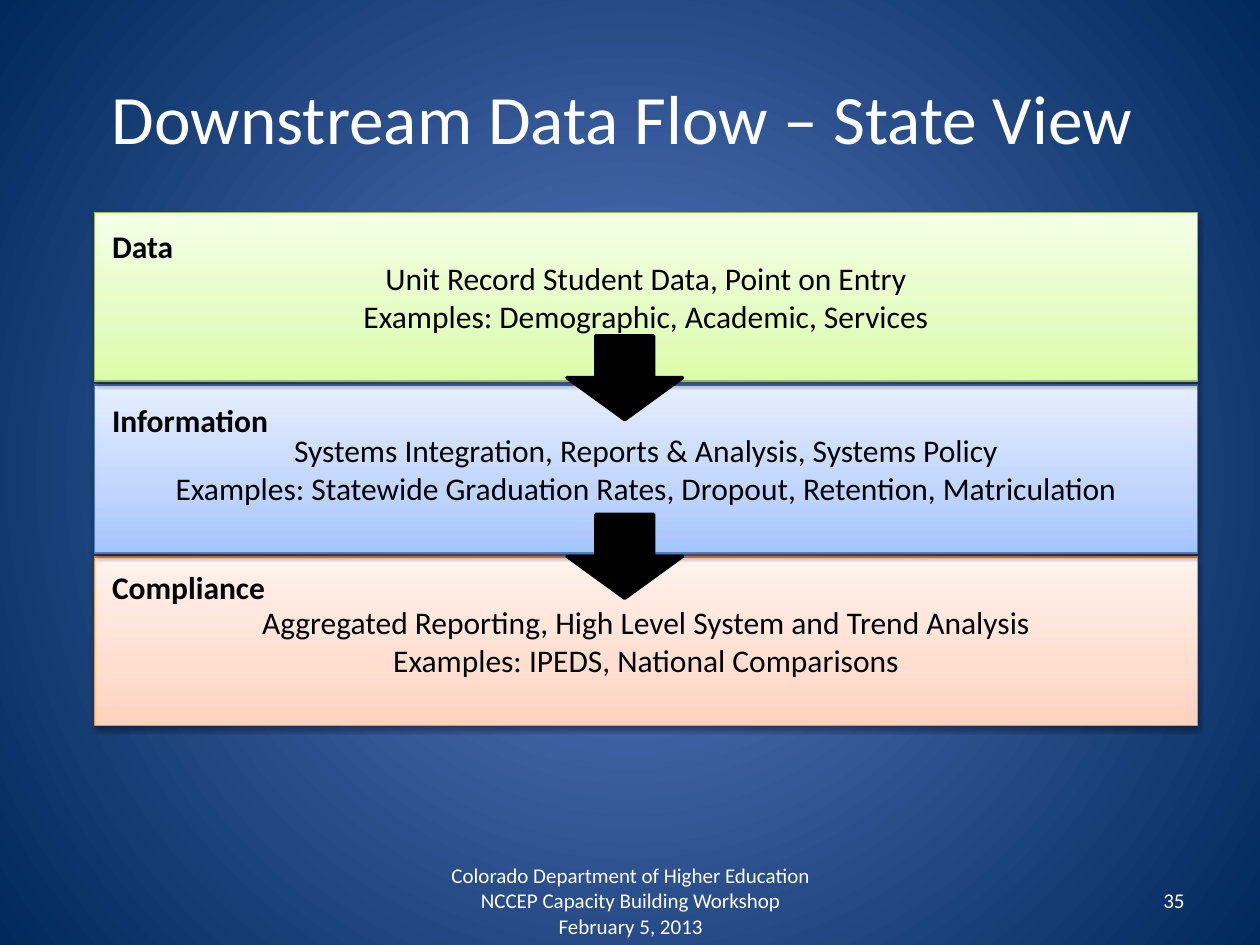
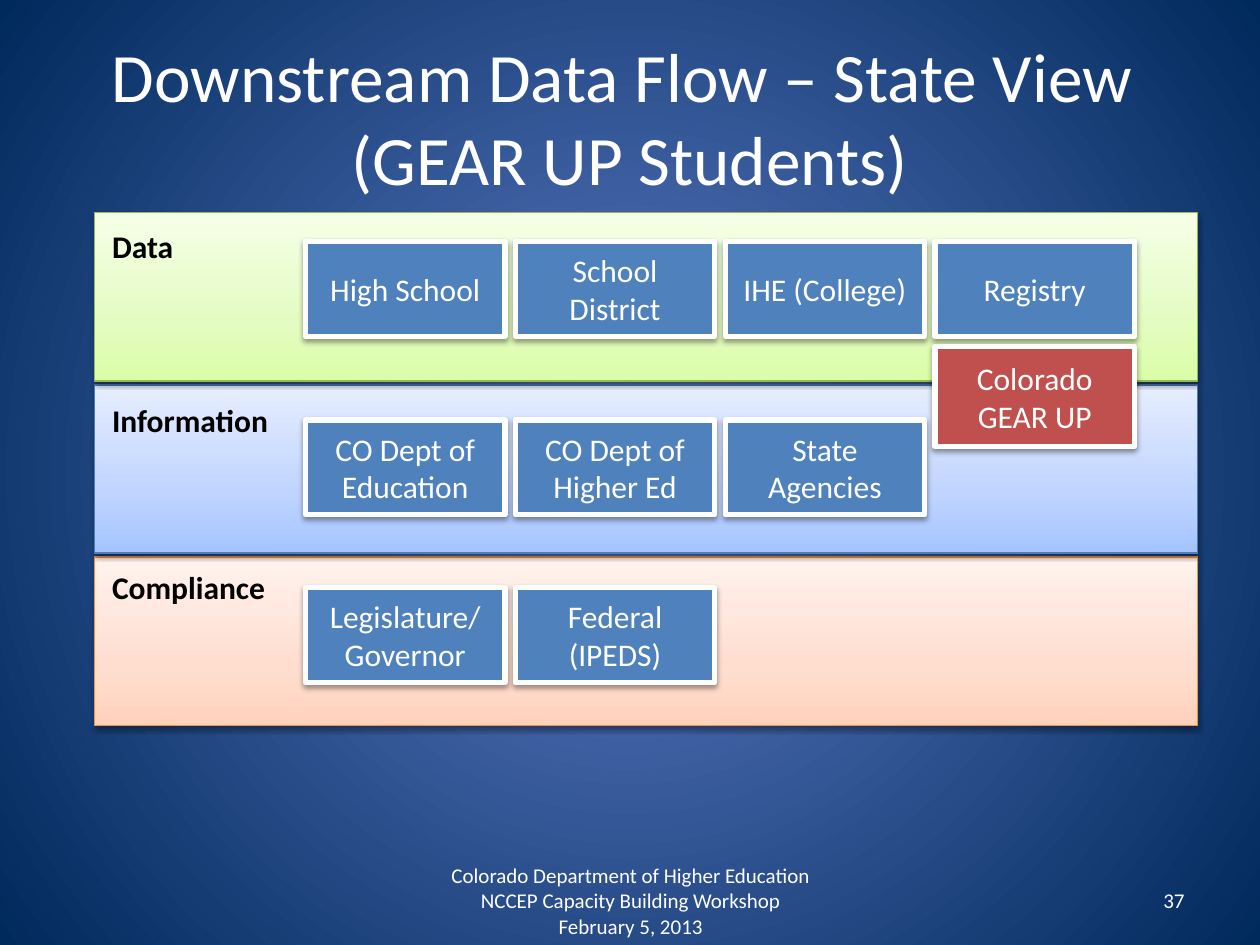
from dataclasses import dataclass

from lxml import etree
from pptx import Presentation
from pptx.dml.color import RGBColor
from pptx.enum.shapes import MSO_SHAPE
from pptx.enum.text import MSO_ANCHOR, MSO_AUTO_SIZE, PP_ALIGN
from pptx.oxml.ns import qn
from pptx.util import Cm, Pt

RECTANGLE, DOWN_ARROW = MSO_SHAPE.RECTANGLE, MSO_SHAPE.DOWN_ARROW
LEFT, CENTER, RIGHT = PP_ALIGN.LEFT, PP_ALIGN.CENTER, PP_ALIGN.RIGHT
TOP, MIDDLE = MSO_ANCHOR.TOP, MSO_ANCHOR.MIDDLE
NO_AUTOFIT = MSO_AUTO_SIZE.NONE

FONT = "Calibri"
WHITE = RGBColor(0xFF, 0xFF, 0xFF)
BLACK = RGBColor(0x00, 0x00, 0x00)
SOURCE_BLUE = RGBColor(0x4F, 0x81, 0xBD)
PROGRAM_RED = RGBColor(0xC0, 0x50, 0x4D)
BACKGROUND_CENTER = RGBColor(0x5E, 0x7C, 0xC5)
BACKGROUND_EDGE = RGBColor(0x00, 0x29, 0x5C)

TITLE_SIZE, TEXT_SIZE, FOOTER_SIZE = Pt(39.6), Pt(18), Pt(12)
TITLE = "Downstream Data Flow – State View "
FOOTER = ("Colorado Department of Higher Education\n"
          "NCCEP Capacity Building Workshop\nFebruary 5, 2013")

# Layout in centimetres
BAND_LEFT, BAND_TOP, BAND_WIDTH, BAND_HEIGHT = 1.91, 4.29, 22.23, 3.39
BAND_PITCH = 3.47
BOX_LEFT, BOX_WIDTH, BOX_HEIGHT, BOX_PITCH = 6.16, 4.02, 1.91, 4.23
ARROW_LEFT, ARROW_WIDTH, ARROW_HEIGHT = 11.43, 2.33, 1.69
ARROW_TOPS = (6.77, 10.37)
FOOTER_TOP, FOOTER_HEIGHT = 17.65, 1.01


@dataclass
class Level:
    name: str
    label_top: float
    label_width: float
    boxes_top: float
    outline: RGBColor
    shades: tuple
    description: list
    sources: list


LEVELS = [
    Level("Data", 4.45, 1.75, 4.87, RGBColor(0x98, 0xB9, 0x55),
          (RGBColor(0xDA, 0xFD, 0xA7), RGBColor(0xE4, 0xFC, 0xC2), RGBColor(0xF5, 0xFF, 0xE7)),
          ["Unit Record Student Data, Point on Entry",
           "Examples: Demographic, Academic, Services"],
          ["High School", "School District", "IHE (College)", "Registry"]),
    Level("Information", 7.95, 3.68, 8.47, RGBColor(0x4B, 0x7E, 0xBC),
          (RGBColor(0xA4, 0xC4, 0xFF), RGBColor(0xBF, 0xD4, 0xFF), RGBColor(0xE6, 0xEE, 0xFF)),
          ["Systems Integration, Reports & Analysis, Systems Policy",
           "Examples: Statewide Graduation Rates, Dropout, Retention, Matriculation"],
          ["CO Dept of Education", "CO Dept of Higher Ed", "State Agencies"]),
    Level("Compliance", 11.33, 3.61, 11.85, RGBColor(0xF6, 0x92, 0x40),
          (RGBColor(0xFF, 0xD2, 0xBD), RGBColor(0xFF, 0xDE, 0xD0), RGBColor(0xFF, 0xF2, 0xED)),
          ["Aggregated Reporting, High Level System and Trend Analysis",
           "Examples: IPEDS, National Comparisons"],
          ["Legislature/ Governor", "Federal (IPEDS)"]),
]


def add_child(parent, tag, **attributes):
    return etree.SubElement(parent, qn(tag), attributes)


def set_stops(gradient, stops):
    """Empty the gradient and give it (percent, colour) stops."""
    for child in list(gradient):
        gradient.remove(child)
    stop_list = add_child(gradient, "a:gsLst")
    for percent, color in stops:
        stop = add_child(stop_list, "a:gs", pos=str(percent * 1000))
        add_child(stop, "a:srgbClr", val=str(color))


def set_background(master):
    master.background.fill.gradient()
    gradient = next(master.element.iter(qn("a:gradFill")))
    set_stops(gradient, [(0, BACKGROUND_CENTER), (100, BACKGROUND_EDGE)])
    circle = add_child(gradient, "a:path", path="circle")
    add_child(circle, "a:fillToRect", l="50000", t="50000", r="50000", b="50000")


def add_soft_shadow(shape):
    effects = shape.element.spPr.find(qn("a:effectLst"))
    shadow = add_child(effects, "a:outerShdw", blurRad="40000", dist="20000",
                       dir="5400000", rotWithShape="0")
    color = add_child(shadow, "a:srgbClr", val=str(BLACK))
    add_child(color, "a:alpha", val="38000")


def write(frame, paragraphs, size, color, align=CENTER, anchor=MIDDLE, bold=False):
    frame.vertical_anchor = anchor
    for index, text in enumerate(paragraphs):
        paragraph = frame.add_paragraph() if index else frame.paragraphs[0]
        paragraph.alignment = align
        for line_number, line in enumerate(text.split("\n")):
            if line_number:
                paragraph.add_line_break()
            run = paragraph.add_run()
            run.text = line
            run.font.name, run.font.size, run.font.bold = FONT, size, bold
            run.font.color.rgb = color


def add_text(slide, text, left, top, width, height, size, color, wrap=True, **style):
    frame = slide.shapes.add_textbox(Cm(left), Cm(top), Cm(width), Cm(height)).text_frame
    frame.word_wrap = wrap
    write(frame, [text], size, color, **style)


def add_block(slide, kind, left, top, width, height, outline, outline_width):
    block = slide.shapes.add_shape(kind, Cm(left), Cm(top), Cm(width), Cm(height))
    block.shadow.inherit = False
    block.line.color.rgb = outline
    block.line.width = Pt(outline_width)
    return block


def add_band(slide, row, level, description):
    band = add_block(slide, RECTANGLE, BAND_LEFT, BAND_TOP + row * BAND_PITCH,
                     BAND_WIDTH, BAND_HEIGHT, level.outline, 0.75)
    band.fill.gradient()
    gradient = band.element.spPr.find(qn("a:gradFill"))
    set_stops(gradient, zip((0, 35, 100), level.shades))
    add_child(gradient, "a:lin", ang="16200000", scaled="0")
    add_soft_shadow(band)
    write(band.text_frame, description, TEXT_SIZE, BLACK)


def add_box(slide, text, column, top, height=BOX_HEIGHT, color=SOURCE_BLUE):
    box = add_block(slide, RECTANGLE, BOX_LEFT + column * BOX_PITCH, top,
                    BOX_WIDTH, height, WHITE, 3)
    box.fill.solid()
    box.fill.fore_color.rgb = color
    add_soft_shadow(box)
    write(box.text_frame, [text], TEXT_SIZE, WHITE)


def add_arrow(slide, top):
    arrow = add_block(slide, DOWN_ARROW, ARROW_LEFT, top, ARROW_WIDTH, ARROW_HEIGHT, BLACK, 2)
    arrow.fill.solid()
    arrow.fill.fore_color.rgb = BLACK


def add_flow_slide(prs, title_text, number, described):
    """Title, three labelled bands, footer and page number."""
    slide = prs.slides.add_slide(prs.slide_layouts[5])
    title = slide.shapes.title
    title.left, title.top, title.width, title.height = Cm(1.27), Cm(0.76), Cm(22.86), Cm(3.18)
    title.text_frame.auto_size = NO_AUTOFIT
    write(title.text_frame, [title_text], TITLE_SIZE, WHITE)

    # Lower bands lie behind, so each shadow falls on the band below
    for row, level in reversed(list(enumerate(LEVELS))):
        add_band(slide, row, level, level.description if described else [])
    for level in LEVELS:
        add_text(slide, level.name, 2.01, level.label_top, level.label_width, 1.02,
                 TEXT_SIZE, BLACK, wrap=False, align=LEFT, anchor=TOP, bold=True)

    add_text(slide, FOOTER, 8.69, FOOTER_TOP, 8.05, FOOTER_HEIGHT, FOOTER_SIZE, WHITE)
    add_text(slide, str(number), 18.21, FOOTER_TOP, 5.92, FOOTER_HEIGHT,
             FOOTER_SIZE, WHITE, align=RIGHT)
    return slide


def main():
    prs = Presentation()
    prs.slide_width, prs.slide_height = Cm(25.4), Cm(19.05)
    set_background(prs.slide_master)

    # State view: what each level holds
    state_view = add_flow_slide(prs, TITLE, 35, described=True)
    for top in ARROW_TOPS:
        add_arrow(state_view, top)

    # GEAR UP students: who supplies each level
    student_view = add_flow_slide(prs, TITLE + "\n(GEAR UP Students)", 37, described=False)
    for level in LEVELS:
        for column, source in enumerate(level.sources):
            add_box(student_view, source, column, level.boxes_top)
    add_box(student_view, "Colorado GEAR UP", 3, 6.99, 2.01, PROGRAM_RED)

    prs.save("out.pptx")


if __name__ == "__main__":
    main()
